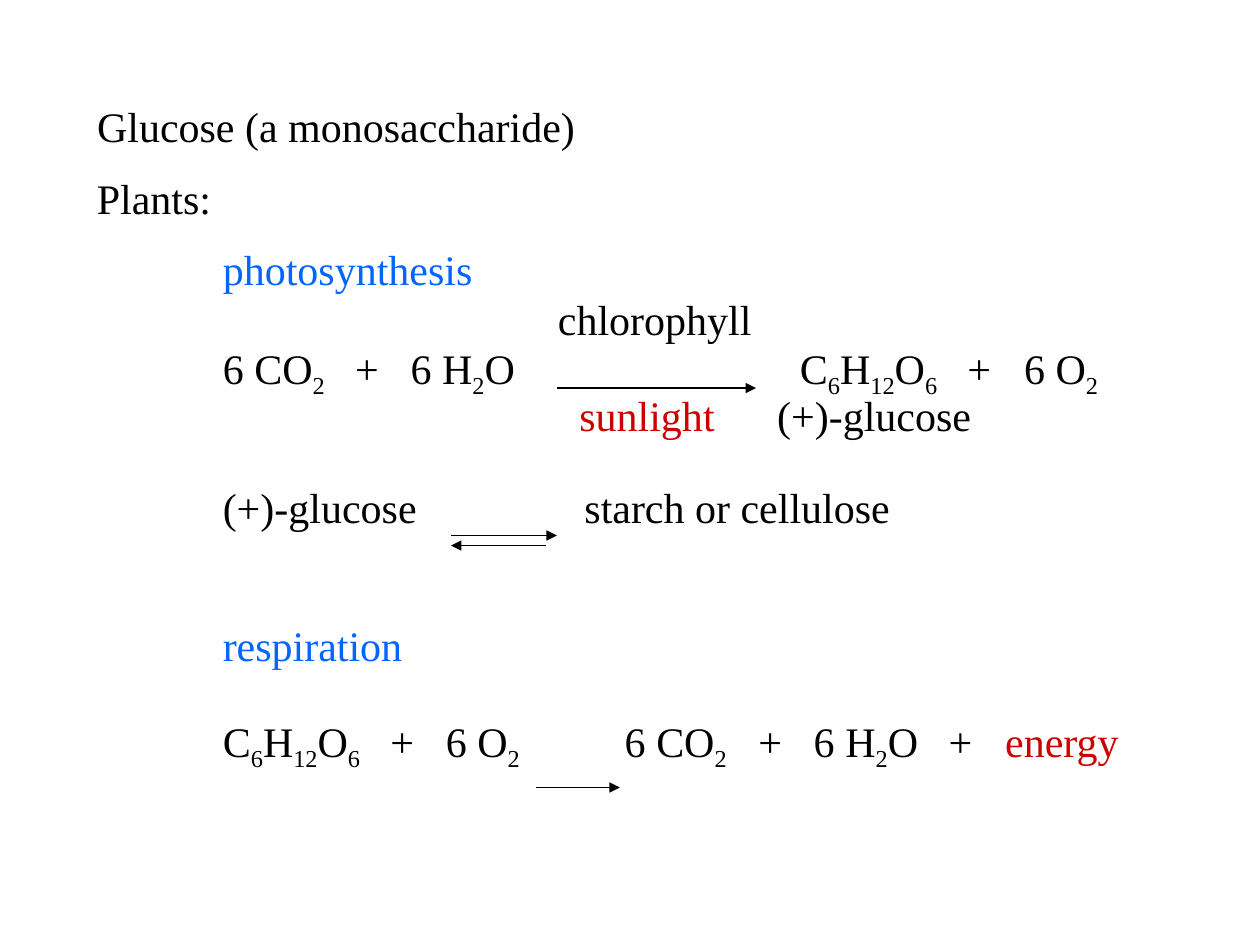
from lxml import etree
from pptx import Presentation
from pptx import util as u
from pptx.dml.color import RGBColor
from pptx.enum import shapes, text
from pptx.oxml import ns

BLACK = RGBColor(0, 0, 0)
BLUE = RGBColor(0x00, 0x66, 0xFF)
RED = RGBColor(0xCC, 0x00, 0x00)

TITLE = [("Glucose (a monosaccharide)", BLACK)]

REACTIONS = [
    ([("Plants:", BLACK)], [], 1.0, 0),
    ([("\tphotosynthesis", BLUE)], [1], 1.0, 12),
    ([("\tchlorophyll", BLACK)], [3.66], 0.5, 12),
    ([("\t6 CO_2_\t+\t6 H_2_O\tC_6_H_12_O_6_\t+\t6 O_2_", BLACK)],
     [1, 2.05, 2.49, 5.58, 6.91, 7.36], 0.5, 12),
    ([("\tsunlight", RED), ("\t(+)-glucose", BLACK)], [3.83, 5.4], 0.5, 12),
    ([("\t(+)-glucose\tstarch or cellulose", BLACK)], [1, 3.87], 0.5, 38.5),
    ([("\trespiration", BLUE)], [1], 0.5, 64.5),
    ([("\tC_6_H_12_O_6_\t+\t6 O_2_\t6 CO_2_\t+\t6 H_2_O\t+", BLACK),
      ("\tenergy", RED)],
     [1, 2.33, 2.77, 4.19, 5.25, 5.69, 6.76, 7.21], 0.5, 38.5),
]

ARROWS = [
    (4.42, 3.08, 6, 3.08),
    (3.58, 4.25, 4.42, 4.25),
    (4.33, 4.33, 3.58, 4.33),
    (4.25, 6.25, 4.92, 6.25),
]


def set_attributes(target, values):
    for name, value in values.items():
        setattr(target, name, value)


def place_frame(holder, left, top, width, height):
    set_attributes(holder, {
        "left": u.Inches(left), "top": u.Inches(top),
        "width": u.Inches(width), "height": u.Inches(height),
    })
    set_attributes(holder.text_frame, {
        "word_wrap": True,
        "auto_size": text.MSO_AUTO_SIZE.NONE,
        "vertical_anchor": text.MSO_ANCHOR.TOP,
    })
    return holder.text_frame


def write_formula(line, formula, color):
    for index, part in enumerate(formula.split("_")):
        if not part:
            continue
        run = line.add_run()
        run.text = part
        set_attributes(run.font, {"name": "Times New Roman", "size": u.Pt(24)})
        run.font.color.rgb = color
        if index % 2:
            run.font._element.set("baseline", "-25000")


def write_line(line, pieces, stops=(), spacing=1.0, before=0):
    set_attributes(line, {
        "alignment": text.PP_ALIGN.LEFT,
        "line_spacing": spacing,
        "space_before": u.Pt(before),
    })
    if stops:
        tabs = etree.SubElement(line._p.get_or_add_pPr(), ns.qn("a:tabLst"))
        for stop in stops:
            etree.SubElement(tabs, ns.qn("a:tab"),
                             pos=str(int(u.Inches(stop))), algn="l")
    for formula, color in pieces:
        write_formula(line, formula, color)


def add_arrow(slide, *ends):
    arrow = slide.shapes.add_connector(
        shapes.MSO_CONNECTOR.STRAIGHT, *map(u.Inches, ends))
    arrow.line.color.rgb = BLACK
    arrow.line.width = u.Pt(0.75)
    etree.SubElement(arrow.line._get_or_add_ln(), ns.qn("a:tailEnd"),
                     type="triangle")
    etree.SubElement(arrow._element.spPr, ns.qn("a:effectLst"))


def main():
    deck = Presentation()
    set_attributes(deck, {"slide_width": u.Inches(10),
                          "slide_height": u.Inches(7.5)})
    slide = deck.slides.add_slide(deck.slide_layouts[5])

    heading = place_frame(slide.shapes.title, 0.67, 0.75, 8.83, 0.55)
    write_line(heading.paragraphs[0], TITLE)

    reactions_box = slide.shapes.add_textbox(0, 0, 0, 0)
    scheme = place_frame(reactions_box, 0.67, 1.32, 8.83, 5.12)
    for index, reaction in enumerate(REACTIONS):
        line = scheme.add_paragraph() if index else scheme.paragraphs[0]
        write_line(line, *reaction)

    for ends in ARROWS:
        add_arrow(slide, *ends)

    deck.save("out.pptx")


if __name__ == "__main__":
    main()
